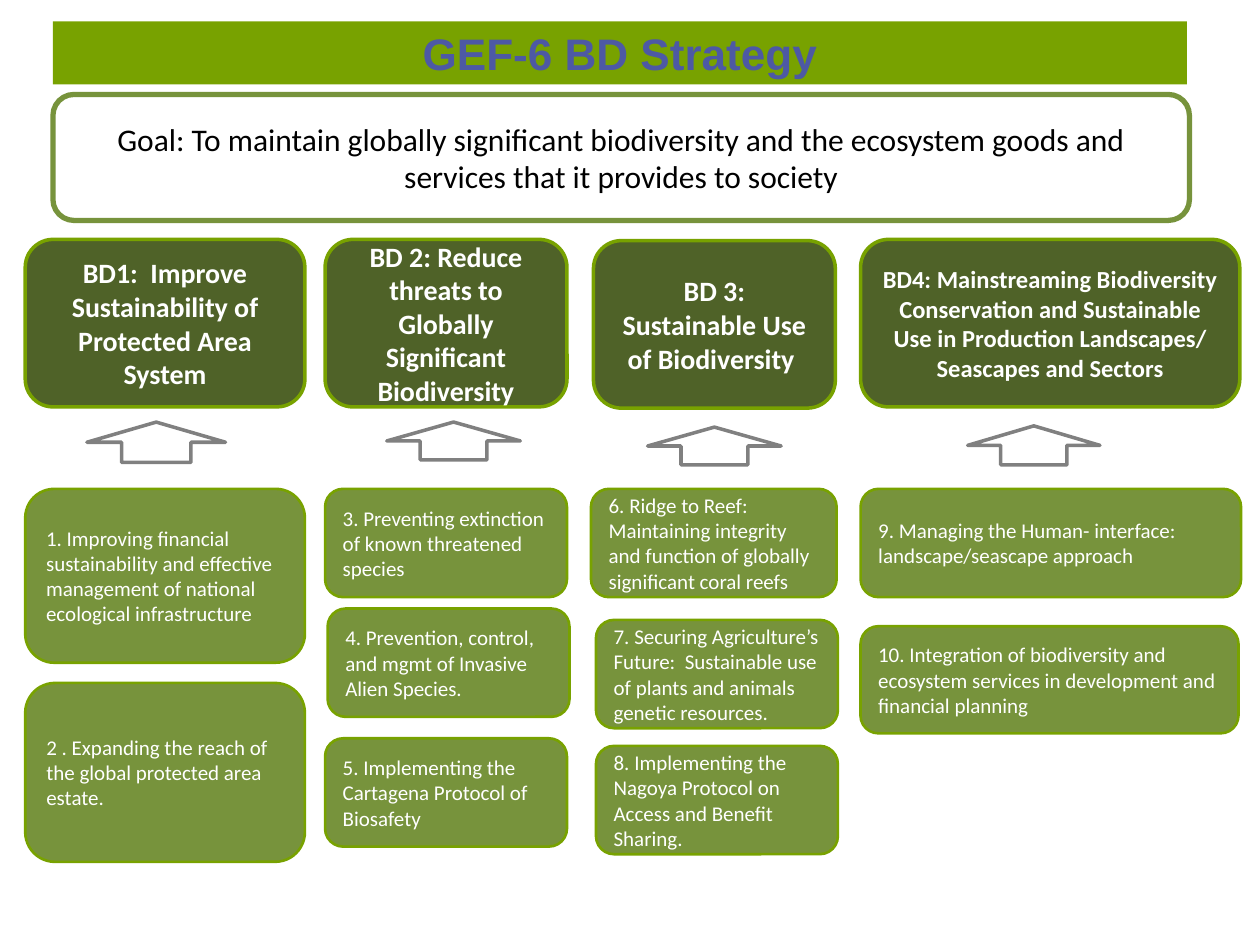
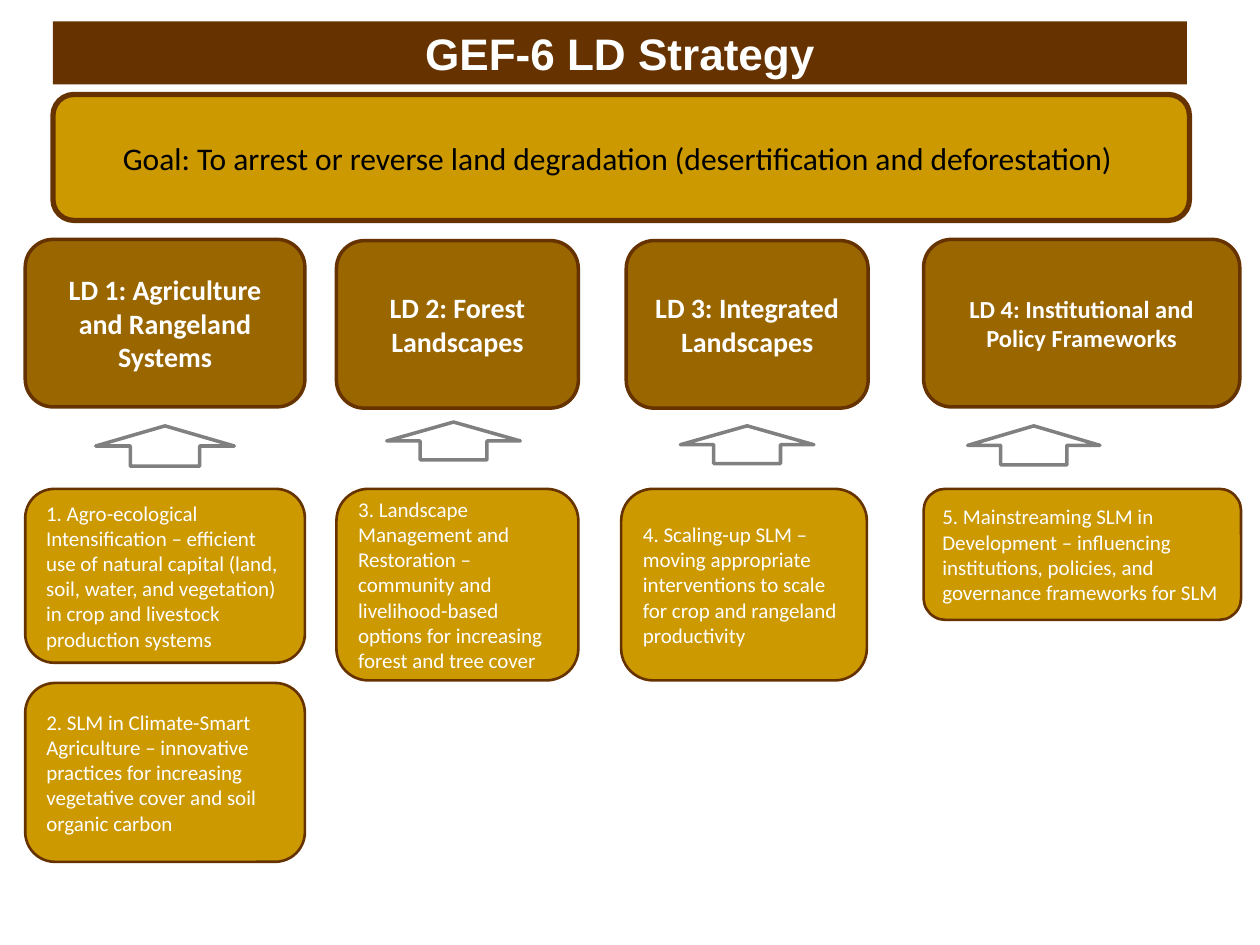
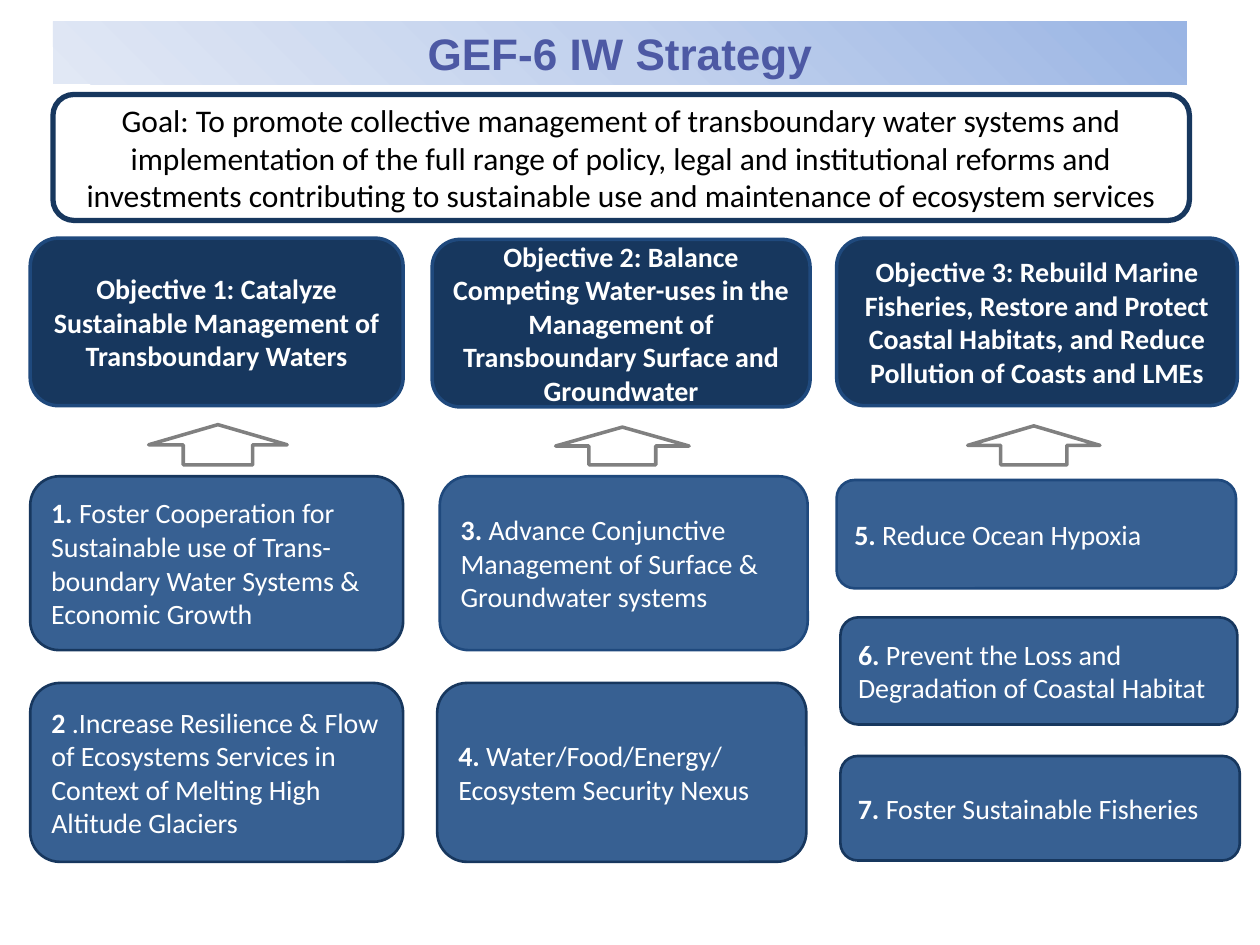
from dataclasses import dataclass

from pptx import Presentation
from pptx.dml.color import RGBColor
from pptx.enum.shapes import MSO_SHAPE as Shape
from pptx.enum.text import MSO_ANCHOR as Anchor, MSO_AUTO_SIZE as AutoSize, PP_ALIGN as Align
from pptx.oxml import parse_xml
from pptx.oxml.ns import nsdecls
from pptx.util import Inches, Pt


@dataclass(frozen=True)
class Theme:
    white: str = "FFFFFF"
    black: str = "000000"
    title_blue: str = "4D59A4"
    arrow_line: str = "808080"
    title_font: str = "Arial"
    body_font: str = "Calibri"
    title_size: float = 25.2
    goal_size: float = 18
    large: float = 16
    medium: float = 14
    small: float = 12
    goal_border: float = 3
    thick_border: float = 2
    thin_border: float = 1.5
    title_stops: tuple = ((0, "9AB5E4"), (50, "C2D1ED"), (100, "E1E8F5"))


theme = Theme()
TITLE_BAND = (0.42, 0.17, 9, 0.5)
GOAL_BOX = (0.42, 0.75, 9.02, 1)
HEADER_HEIGHT = 1.33

# A header is (left, top, width, text, size); arrows and cards start with left, top, width, height.
# In card text, the part before "|" is bold.
strategies = [
    {
        "title": "GEF-6 BD Strategy", "title_fill": "78A200", "title_color": theme.title_blue,
        "goal": "Goal: To maintain globally significant biodiversity and the ecosystem goods and "
                "services that it provides to society",
        "goal_fill": theme.white, "goal_line": "77933C",
        "header_fill": "4F6228", "header_line": "78A200",
        "card_fill": "77933C", "card_line": "78A200", "card_size": theme.small,
        "headers": [
            (0.2, 1.9, 2.22, "BD1:  Improve Sustainability of Protected Area System", theme.large),
            (2.58, 1.9, 1.92, "BD 2: Reduce threats to Globally Significant Biodiversity", theme.large),
            (4.71, 1.91, 1.92, "BD 3: Sustainable Use of Biodiversity ", theme.large),
            (6.83, 1.9, 3.01, "BD4: Mainstreaming Biodiversity Conservation and Sustainable Use in "
                              "Production Landscapes/ Seascapes and Sectors", theme.medium),
        ],
        "arrows": [(0.69, 3.35, 1.1, 0.32), (3.07, 3.35, 1.06, 0.3),
                   (5.14, 3.39, 1.06, 0.3), (7.68, 3.38, 1.05, 0.31)],
        "cards": [
            (0.2, 3.88, 2.22, 1.38, "1. Improving financial sustainability and effective management "
                                    "of national ecological infrastructure"),
            (0.2, 5.42, 2.22, 1.42, "2 . Expanding the reach of the global protected area estate."),
            (2.58, 3.88, 1.92, 0.86, "3. Preventing extinction of known threatened species"),
            (2.6, 4.83, 1.92, 0.86, "4. Prevention, control, and mgmt of Invasive Alien Species."),
            (2.58, 5.86, 1.92, 0.86, "5. Implementing the Cartagena Protocol of Biosafety"),
            (4.69, 3.88, 1.95, 0.86, "6. Ridge to Reef: Maintaining integrity and function of "
                                     "globally significant coral reefs"),
            (4.73, 4.92, 1.92, 0.86, "7. Securing Agriculture’s Future:  Sustainable use of plants "
                                     "and animals genetic resources."),
            (4.73, 5.92, 1.92, 0.86, "8. Implementing the Nagoya Protocol on Access and Benefit Sharing."),
            (6.83, 3.88, 3.02, 0.86, "9. Managing the Human- interface: landscape/seascape approach"),
            (6.83, 4.97, 3, 0.85, "10. Integration of biodiversity and ecosystem services in "
                                  "development and financial planning"),
        ],
    },
    {
        "title": "GEF-6 LD Strategy", "title_fill": "663300", "title_color": theme.white,
        "goal": "Goal: To arrest or reverse land degradation (desertification and deforestation) ",
        "goal_fill": "CC9900", "goal_line": "663300",
        "header_fill": "996600", "header_line": "663300",
        "card_fill": "CC9900", "card_line": "663300", "card_size": theme.small,
        "headers": [
            (0.2, 1.9, 2.22, "LD 1: Agriculture and Rangeland Systems", theme.large),
            (2.67, 1.91, 1.92, "LD 2: Forest Landscapes", theme.large),
            (4.97, 1.91, 1.92, "LD 3: Integrated Landscapes", theme.large),
            (7.33, 1.9, 2.51, "LD 4: Institutional and Policy Frameworks", theme.medium),
        ],
        "arrows": [(0.76, 3.38, 1.1, 0.32), (3.07, 3.35, 1.06, 0.3),
                   (5.4, 3.38, 1.06, 0.3), (7.68, 3.38, 1.05, 0.31)],
        "cards": [
            (0.2, 3.88, 2.22, 1.38, "1. Agro-ecological Intensification – efficient use of natural "
                                    "capital (land, soil, water, and vegetation) in crop and "
                                    "livestock production systems"),
            (0.2, 5.42, 2.22, 1.42, "2. SLM in Climate-Smart Agriculture – innovative practices for "
                                    "increasing vegetative cover and soil organic carbon"),
            (2.67, 3.88, 1.92, 1.52, "3. Landscape Management and Restoration – community and "
                                     "livelihood-based options for increasing forest and tree cover"),
            (4.93, 3.88, 1.95, 1.52, "4. Scaling-up SLM – moving appropriate interventions to scale "
                                     "for crop and rangeland productivity"),
            (7.33, 3.88, 2.52, 1.04, "5. Mainstreaming SLM in Development – influencing institutions, "
                                     "policies, and governance frameworks for SLM"),
        ],
    },
    {
        "title": "GEF-6 IW Strategy", "title_fill": theme.title_stops, "title_color": theme.title_blue,
        "goal": "Goal: To promote collective management of transboundary water systems and "
                "implementation of the full range of policy, legal and institutional reforms and "
                "investments contributing to sustainable use and maintenance of ecosystem services",
        "goal_fill": theme.white, "goal_line": "17375E",
        "header_fill": "17375E", "header_line": "1F497D",
        "card_fill": "376092", "card_line": "17375E", "card_size": theme.large,
        "headers": [
            (0.24, 1.89, 2.96, "Objective 1: Catalyze Sustainable Management of Transboundary Waters",
             theme.large),
            (3.43, 1.9, 3, "Objective 2: Balance Competing Water-uses in the Management of "
                           "Transboundary Surface and Groundwater", theme.large),
            (6.64, 1.89, 3.18, "Objective 3: Rebuild Marine Fisheries, Restore and Protect Coastal "
                               "Habitats, and Reduce Pollution of Coasts and LMEs", theme.large),
        ],
        "arrows": [(1.18, 3.37, 1.1, 0.32), (4.41, 3.39, 1.06, 0.3), (7.68, 3.38, 1.05, 0.31)],
        "cards": [
            (0.24, 3.78, 2.96, 1.38, "1.| Foster Cooperation for Sustainable use of Trans- boundary "
                                     "Water Systems & Economic Growth"),
            (0.24, 5.42, 2.96, 1.42, "2| .Increase Resilience & Flow of Ecosystems Services in "
                                     "Context of Melting High Altitude Glaciers"),
            (3.49, 3.78, 2.92, 1.38, "3.| Advance Conjunctive Management of Surface & Groundwater "
                                     "systems", "1F497D"),
            (3.47, 5.42, 2.93, 1.42, "4. |Water/Food/Energy/\nEcosystem Security Nexus"),
            (6.64, 3.81, 3.17, 0.86, "5.| Reduce Ocean Hypoxia", "1F497D"),
            (6.67, 4.9, 3.15, 0.85, "6.| Prevent the Loss and Degradation of Coastal Habitat"),
            (6.67, 6, 3.17, 0.83, "7.| Foster Sustainable Fisheries"),
        ],
    },
]


def write_text(shape, text, size, color=theme.white, font=theme.body_font, bold=False, align=Align.CENTER):
    """Fill a shape with one paragraph per line, with any part before "|" in bold."""
    frame = shape.text_frame
    frame.word_wrap = True
    frame.auto_size = AutoSize.NONE
    frame.vertical_anchor = Anchor.MIDDLE
    for index, line in enumerate(text.split("\n")):
        paragraph = frame.add_paragraph() if index else frame.paragraphs[0]
        paragraph.alignment = align
        lead, _, rest = line.rpartition("|")
        for part, part_bold in ((lead, True), (rest, bold)):
            if part:
                run = paragraph.add_run()
                run.text = part
                run.font.name = font
                run.font.size = Pt(size)
                run.font.bold = part_bold
                run.font.color.rgb = RGBColor.from_string(color)


def add_box(slide, kind, place, fill, line, border):
    shape = slide.shapes.add_shape(kind, *map(Inches, place))
    shape.shadow.inherit = False
    shape.fill.solid()
    shape.fill.fore_color.rgb = RGBColor.from_string(fill)
    shape.line.color.rgb = RGBColor.from_string(line)
    shape.line.width = Pt(border)
    return shape


presentation = Presentation()
presentation.slide_width = Inches(10)
presentation.slide_height = Inches(7.5)

for strategy in strategies:
    slide = presentation.slides.add_slide(presentation.slide_layouts[5])

    title = slide.shapes.title
    title.left, title.top, title.width, title.height = map(Inches, TITLE_BAND)
    if isinstance(strategy["title_fill"], str):
        title.fill.solid()
        title.fill.fore_color.rgb = RGBColor.from_string(strategy["title_fill"])
    else:
        stops = "".join(f'<a:gs pos="{position * 1000}"><a:srgbClr val="{color}"/></a:gs>'
                        for position, color in strategy["title_fill"])
        title.element.spPr.append(parse_xml(
            f'<a:gradFill {nsdecls("a")} rotWithShape="1"><a:gsLst>{stops}</a:gsLst>'
            '<a:path path="circle"><a:fillToRect l="100000" b="100000"/></a:path></a:gradFill>'))
    write_text(title, strategy["title"], theme.title_size, color=strategy["title_color"],
               font=theme.title_font, bold=True)

    goal = add_box(slide, Shape.ROUNDED_RECTANGLE, GOAL_BOX, strategy["goal_fill"],
                   strategy["goal_line"], theme.goal_border)
    write_text(goal, strategy["goal"], theme.goal_size, color=theme.black)

    for left, top, width, text, size in strategy["headers"]:
        header = add_box(slide, Shape.ROUNDED_RECTANGLE, (left, top, width, HEADER_HEIGHT),
                         strategy["header_fill"], strategy["header_line"], theme.thick_border)
        write_text(header, text, size, bold=True)

    for place in strategy["arrows"]:
        add_box(slide, Shape.UP_ARROW, place, theme.white, theme.arrow_line, theme.thick_border)

    for *place, text, line in (card if len(card) == 6 else (*card, strategy["card_line"])
                               for card in strategy["cards"]):
        card_box = add_box(slide, Shape.ROUNDED_RECTANGLE, place, strategy["card_fill"],
                           line, theme.thin_border)
        write_text(card_box, text, strategy["card_size"], align=Align.LEFT)

presentation.save("out.pptx")
